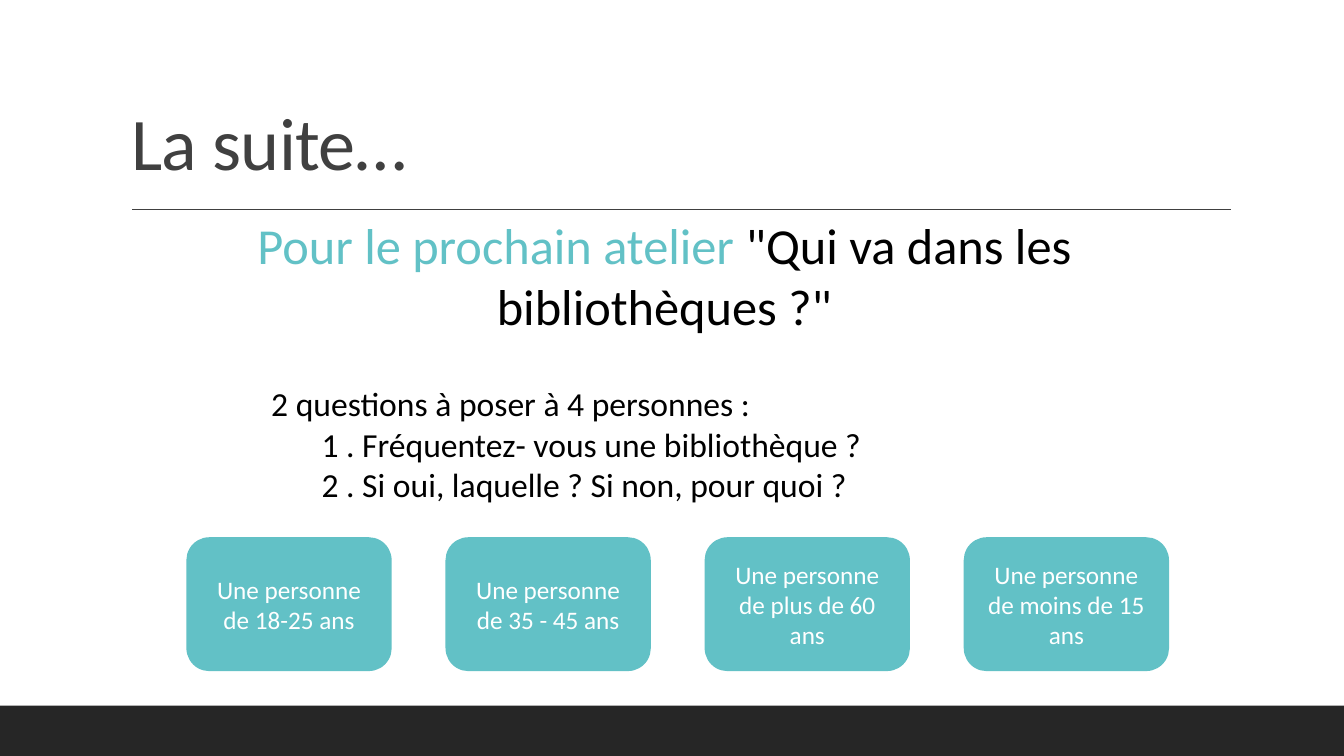
from lxml.etree import SubElement
from pptx import Presentation
from pptx.dml.color import RGBColor
from pptx.enum.shapes import MSO_CONNECTOR as Connector, MSO_SHAPE as Shape
from pptx.enum.text import MSO_ANCHOR as Anchor, MSO_AUTO_SIZE as AutoSize, PP_ALIGN as Align
from pptx.oxml.ns import qn
from pptx.util import Cm, Pt

FONT = "Calibri"
TEAL, BLACK, WHITE = "62C1C6", "000000", "FFFFFF"
TITLE_GREY, BAND_GREY = "404040", "262626"
SLIDE_WIDTH, SLIDE_HEIGHT = 33.87, 19.05

QUESTIONS = [
    ("2 questions à poser à 4 personnes :", 0),
    ("1 . Fréquentez- vous une bibliothèque ?", 1.27),
    ("2 . Si oui, laquelle ? Si non, pour quoi ?", 1.27),
]
AUDIENCES = [
    "Une personne de 18-25 ans",
    "Une personne de 35 - 45 ans",
    "Une personne de plus de 60 ans",
    "Une personne de moins de 15 ans",
]


def rgb(hex_colour):
    return RGBColor.from_string(hex_colour)


def add_text(paragraph, text, size, colour, align=Align.LEFT, spacing=None):
    """Append a formatted run; spacing is between characters, in points."""
    paragraph.alignment = align
    run = paragraph.add_run()
    run.text = text
    run.font.name = FONT
    run.font.size = Pt(size)
    run.font.color.rgb = rgb(colour)
    if spacing is not None:
        run._r.get_or_add_rPr().set("spc", str(round(spacing * 100)))


def place(shape, left, top, width, height):
    shape.left, shape.top = Cm(left), Cm(top)
    shape.width, shape.height = Cm(width), Cm(height)


def add_block(slide, kind, left, top, width, height, fill):
    block = slide.shapes.add_shape(kind, Cm(left), Cm(top), Cm(width), Cm(height))
    block.shadow.inherit = False
    block.fill.solid()
    block.fill.fore_color.rgb = rgb(fill)
    return block


def add_band(slide):
    band = add_block(slide, Shape.RECTANGLE, 0, 17.78, SLIDE_WIDTH, 1.27, BAND_GREY)
    band.line.fill.background()


def add_rule(slide):
    rule = slide.shapes.add_connector(
        Connector.STRAIGHT, Cm(3.33), Cm(5.28), Cm(31.01), Cm(5.28))
    rule.line.color.rgb = rgb(TITLE_GREY)
    rule.line.width = Pt(1)
    SubElement(rule._element.spPr, qn("a:effectLst"))


def fill_title(title):
    place(title, 3.05, 0.79, 27.94, 4.04)
    frame = title.text_frame
    frame.auto_size = AutoSize.NONE
    frame.vertical_anchor = Anchor.BOTTOM
    heading = frame.paragraphs[0]
    heading.line_spacing = 0.9
    add_text(heading, "La suite…", size=53, colour=TITLE_GREY, spacing=-0.5)


def add_workshop(slide):
    workshop = slide.shapes.add_textbox(Cm(4.06), Cm(5.28), Cm(25.37), Cm(3.33))
    frame = workshop.text_frame
    frame.word_wrap = True
    frame.auto_size = AutoSize.SHAPE_TO_FIT_TEXT
    for text, colour in (("Pour le prochain atelier ", TEAL),
                         ('"Qui va dans les bibliothèques ?"', BLACK)):
        add_text(frame.paragraphs[0], text, size=36, colour=colour, align=Align.CENTER)


def fill_questions(body):
    place(body, 6.58, 9.53, 20.88, 3.33)
    frame = body.text_frame
    frame.auto_size = AutoSize.NONE
    for index, (text, indent) in enumerate(QUESTIONS):
        question = frame.add_paragraph() if index else frame.paragraphs[0]
        question.level = 1 if indent else 0
        question.space_before = Pt(0)
        add_text(question, text, size=24, colour=BLACK)
        properties = question._p.get_or_add_pPr()
        properties.set("marL", str(Cm(indent)))
        properties.set("indent", "0")
        SubElement(properties, qn("a:buNone"))


def add_audience(slide, left, text):
    card = add_block(slide, Shape.ROUNDED_RECTANGLE, left, 13.56, 5.13, 3.33, TEAL)
    card.line.color.rgb = rgb(TEAL)
    card.line.width = Pt(1.25)
    frame = card.text_frame
    frame.word_wrap = True
    frame.vertical_anchor = Anchor.MIDDLE
    add_text(frame.paragraphs[0], text, size=18, colour=WHITE, align=Align.CENTER)


def main():
    deck = Presentation()
    deck.slide_width, deck.slide_height = Cm(SLIDE_WIDTH), Cm(SLIDE_HEIGHT)
    slide = deck.slides.add_slide(deck.slide_layouts[1])
    add_band(slide)
    add_rule(slide)
    fill_title(slide.shapes.title)
    add_workshop(slide)
    fill_questions(slide.placeholders[1])
    for index, audience in enumerate(AUDIENCES):
        add_audience(slide, 4.72 + index * 6.53, audience)
    deck.save("out.pptx")


if __name__ == "__main__":
    main()
